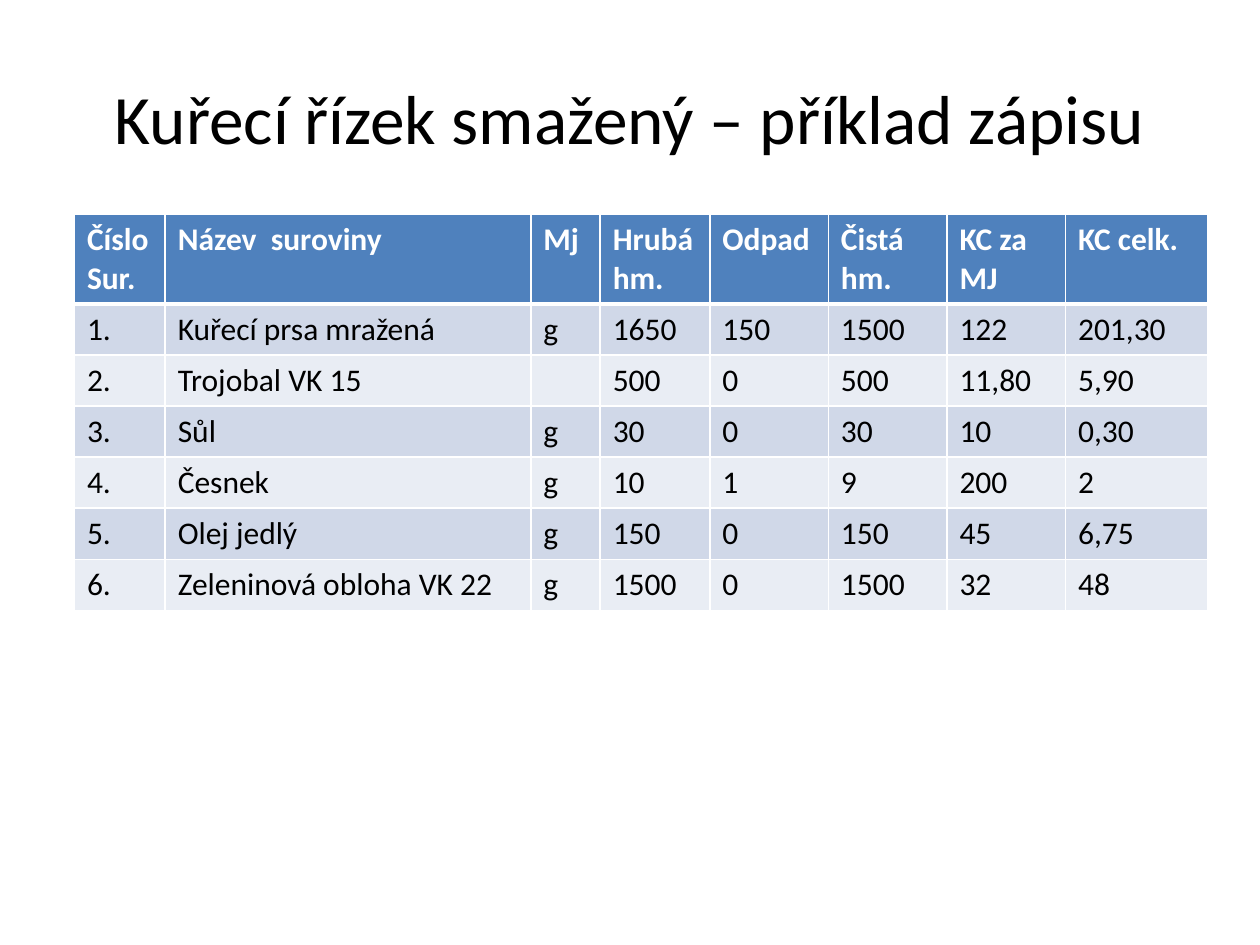
from lxml import etree
from pptx import Presentation
from pptx.dml.color import RGBColor
from pptx.enum import text
from pptx.oxml.ns import qn
from pptx.util import Cm, Pt

HEADER = ["Číslo\nSur.", "Název  suroviny", "Mj", "Hrubá hm.", "Odpad",
          "Čistá hm.", "KC za MJ", "KC celk."]
INGREDIENTS = [
    ["1.", "Kuřecí prsa mražená", "g", "1650", "150", "1500", "122", "201,30"],
    ["2.", "Trojobal VK 15", "", "500", "0", "500", "11,80", "5,90"],
    ["3.", "Sůl", "g", "30", "0", "30", "10", "0,30"],
    ["4.", "Česnek", "g", "10", "1", "9", "200", "2"],
    ["5.", "Olej jedlý", "g", "150", "0", "150", "45", "6,75"],
    ["6.", "Zeleninová obloha VK 22", "g", "1500", "0", "1500", "32", "48"],
]
COL_WIDTHS = [1.83, 7.37, 1.4, 2.21, 2.39, 2.39, 2.39, 2.87]
ROW_HEIGHT = 1.03
HEADER_FILL, BANDS = "4F81BD", ("D0D8E8", "E9EDF4")
TITLE_FONT = {"name": "Calibri", "size": Pt(39.6), "bold": False}
HEADER_FONT = {"name": "Calibri", "size": Pt(18), "bold": True}
BODY_FONT = {**HEADER_FONT, "bold": False}


def rgb(value):
    return RGBColor.from_string(value)


def format_text(tf, font, color):
    for p in tf.paragraphs:
        for name, value in font.items():
            setattr(p.font, name, value)
        p.font.color.rgb = rgb(color)
        for r in p.runs:
            for name, value in font.items():
                setattr(r.font, name, value)
            r.font.color.rgb = rgb(color)


def set_borders(cell, color, widths):
    """Insert the side lines before the fill, as the schema orders them."""
    tc_pr = cell._tc.get_or_add_tcPr()
    for i, (side, width) in enumerate(widths.items()):
        ln = etree.Element(qn(f"a:ln{side}"), w=str(Pt(width)))
        fill = etree.SubElement(ln, qn("a:solidFill"))
        etree.SubElement(fill, qn("a:srgbClr"), val=color)
        tc_pr.insert(i, ln)


def add_title(slide, left, top, width, height):
    sp = slide.shapes.title
    box = {"left": left, "top": top, "width": width, "height": height}
    for name, value in box.items():
        setattr(sp, name, Cm(value))
    tf = sp.text_frame
    tf.text = "Kuřecí řízek smažený – příklad zápisu"
    tf.vertical_anchor = text.MSO_ANCHOR.MIDDLE
    tf.paragraphs[0].alignment = text.PP_ALIGN.CENTER
    format_text(tf, TITLE_FONT, "000000")


def add_recipe_table(slide, left, top):
    rows = [HEADER] + INGREDIENTS
    sp = slide.shapes.add_table(
        len(rows), len(HEADER), Cm(left), Cm(top),
        Cm(sum(COL_WIDTHS)), Cm(ROW_HEIGHT * len(rows)))
    table = sp.table
    for column, width in zip(table.columns, COL_WIDTHS):
        column.width = Cm(width)
    for i, row in enumerate(rows):
        is_header = i == 0
        fill = HEADER_FILL if is_header else BANDS[(i - 1) % 2]
        font = HEADER_FONT if is_header else BODY_FONT
        color = "FFFFFF" if is_header else "000000"
        borders = {"L": 1, "R": 1, "T": 3 if i == 1 else 1,
                   "B": 3 if is_header else 1}
        for j, value in enumerate(row):
            cell = table.cell(i, j)
            cell.text = value
            cell.fill.solid()
            cell.fill.fore_color.rgb = rgb(fill)
            format_text(cell.text_frame, font, color)
            set_borders(cell, "FFFFFF", borders)


def main():
    prs = Presentation()
    prs.slide_width, prs.slide_height = Cm(25.4), Cm(19.05)
    slide = prs.slides.add_slide(prs.slide_layouts[5])
    add_title(slide, 1.27, 0.76, 22.86, 3.18)
    add_recipe_table(slide, 1.5, 4.32)
    prs.save("out.pptx")


if __name__ == "__main__":
    main()
